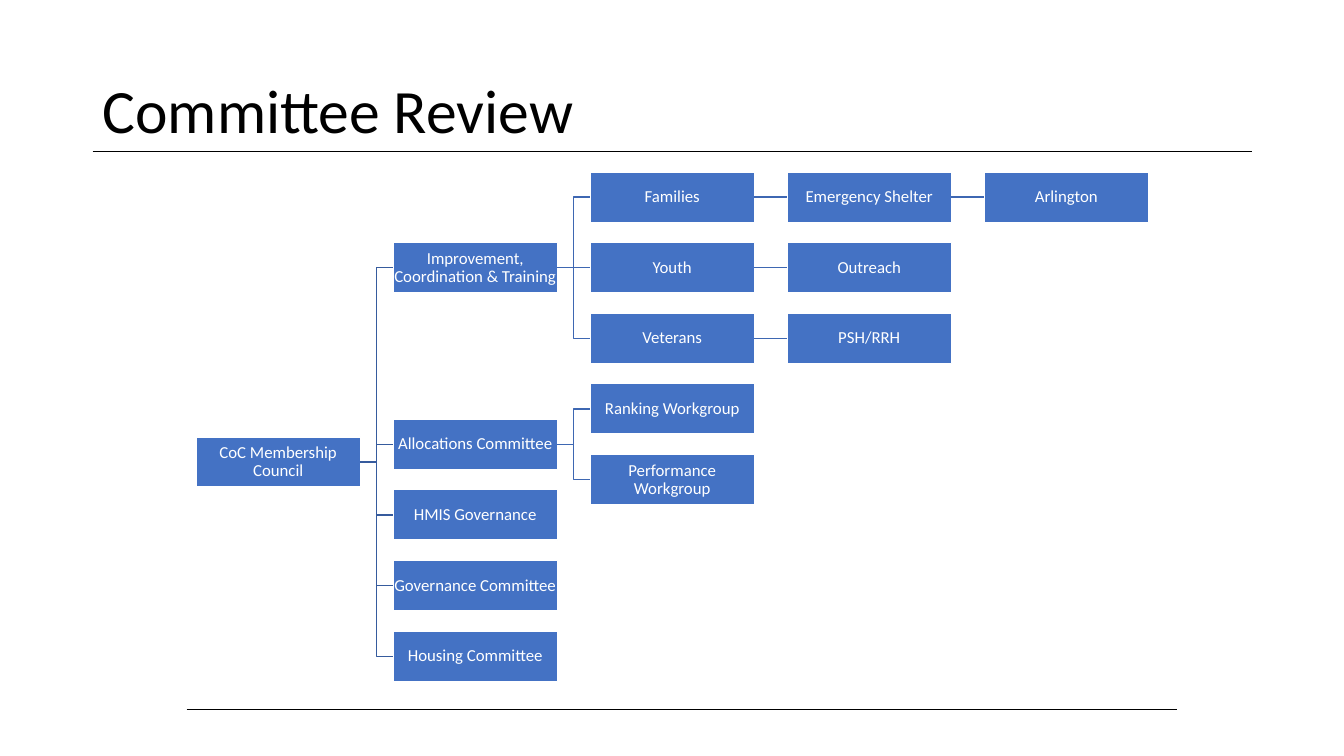
from pptx import Presentation
from pptx.dml.color import RGBColor
from pptx.enum.shapes import MSO_CONNECTOR, MSO_SHAPE
from pptx.enum.text import MSO_ANCHOR, PP_ALIGN
from pptx.oxml.ns import qn
from pptx.util import Inches, Pt
from lxml import etree

TITLE = "Committee Review"
COMMITTEES = ("CoC Membership Council", [
    ("Improvement, Coordination & Training", [
        ("Families", [("Emergency Shelter", [("Arlington", [])])]),
        ("Youth", [("Outreach", [])]),
        ("Veterans", [("PSH/RRH", [])]),
    ]),
    ("Allocations Committee", [
        ("Ranking Workgroup", []),
        ("Performance Workgroup", []),
    ]),
    ("HMIS Governance", []),
    ("Governance Committee", []),
    ("Housing Committee", []),
])
LEAF_ROWS = {
    "Arlington": 0, "Outreach": 1, "PSH/RRH": 2,
    "Ranking Workgroup": 3, "Performance Workgroup": 4,
    "HMIS Governance": 4.5, "Governance Committee": 5.5, "Housing Committee": 6.5,
}
RULES = [(0.92, 12.42, 1.5), (1.85, 11.67, 7.04)]

BLACK = RGBColor(0x00, 0x00, 0x00)
WHITE = RGBColor(0xFF, 0xFF, 0xFF)
BOX_BLUE = RGBColor(0x44, 0x72, 0xC4)
ROOT_LINE = RGBColor(0x36, 0x5B, 0x9D)
BRANCH_LINE = RGBColor(0x3E, 0x67, 0xB2)
FONT = "Calibri"
STRAIGHT, ELBOW = MSO_CONNECTOR.STRAIGHT, MSO_CONNECTOR.ELBOW
RECTANGLE = MSO_SHAPE.RECTANGLE
MIDDLE, CENTER = MSO_ANCHOR.MIDDLE, PP_ALIGN.CENTER
LEFT_SIDE, RIGHT_SIDE = 1, 3

CHART_LEFT, COLUMN_STEP = 1.945, 1.954
FIRST_ROW, ROW_STEP = 1.955, 0.701
BOX_WIDTH, BOX_HEIGHT = 1.63, 0.5

deck = Presentation()
deck.slide_width, deck.slide_height = Inches(13.33), Inches(7.5)
slide = deck.slides.add_slide(deck.slide_layouts[6])


def write(frame, wording, size, color):
    frame.word_wrap = True
    frame.vertical_anchor = MIDDLE
    paragraph = frame.paragraphs[0]
    paragraph.line_spacing = 0.9
    run = paragraph.add_run()
    run.text = wording
    run.font.name, run.font.size = FONT, Pt(size)
    run.font.color.rgb = color
    return paragraph


def add_line(kind, ends, color, width):
    line = slide.shapes.add_connector(kind, *ends)
    line.line.color.rgb = color
    line.line.width = Pt(width)
    etree.SubElement(line._element.spPr, qn("a:effectLst"))
    return line


def row_of(committee):
    name, children = committee
    if not children:
        return LEAF_ROWS[name]
    return (row_of(children[0]) + row_of(children[-1])) / 2


def add_box(name, level, row):
    top = FIRST_ROW + row * ROW_STEP - BOX_HEIGHT / 2
    box = slide.shapes.add_shape(
        RECTANGLE, Inches(CHART_LEFT + level * COLUMN_STEP), Inches(top),
        Inches(BOX_WIDTH), Inches(BOX_HEIGHT))
    box.shadow.inherit = False
    box.fill.solid()
    box.fill.fore_color.rgb = BOX_BLUE
    box.line.color.rgb = WHITE
    box.line.width = Pt(1)
    frame = box.text_frame
    frame.margin_left = frame.margin_right = Inches(0.01)
    frame.margin_top = frame.margin_bottom = Inches(0.01)
    write(frame, name, 12, WHITE).alignment = CENTER
    return box


def add_branch(committee, level=0):
    name, children = committee
    row = row_of(committee)
    box = add_box(name, level, row)
    for child in children:
        child_box = add_branch(child, level + 1)
        ends = (box.left + box.width, box.top + box.height // 2,
                child_box.left, child_box.top + child_box.height // 2)
        link = add_line(STRAIGHT if row_of(child) == row else ELBOW, ends,
                        BRANCH_LINE if level else ROOT_LINE, 1)
        link.begin_connect(box, RIGHT_SIDE)
        link.end_connect(child_box, LEFT_SIDE)
    return box


for start, end, height in RULES:
    add_line(STRAIGHT, [Inches(n) for n in (start, height, end, height)], BLACK, 0.5)

heading = slide.shapes.add_textbox(Inches(0.92), Inches(0.4), Inches(11.5), Inches(1.45))
write(heading.text_frame, TITLE, 44, BLACK)

add_branch(COMMITTEES)

deck.save("out.pptx")
